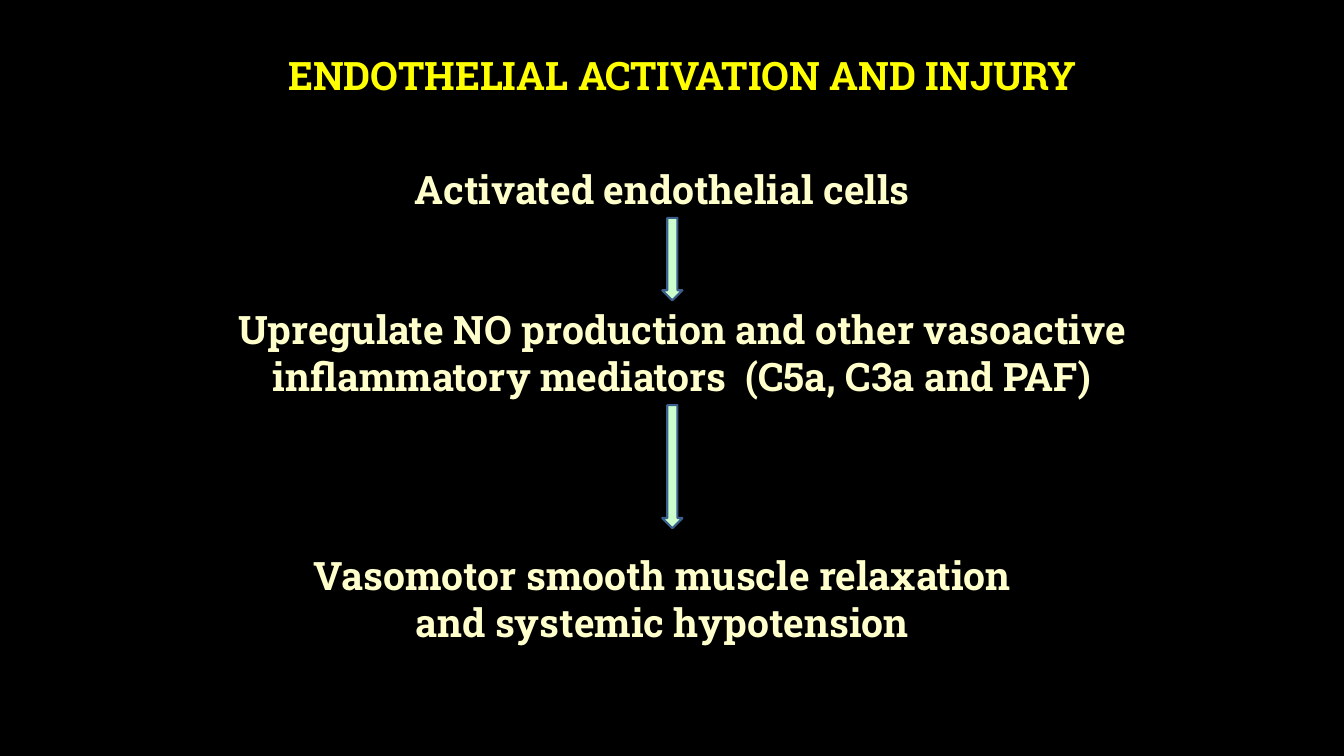
"""Build a slide on endothelial activation and injury as a flow of three steps."""
from dataclasses import dataclass

from pptx import Presentation
from pptx.dml.color import RGBColor
from pptx.enum.shapes import MSO_SHAPE
from pptx.enum.text import MSO_ANCHOR, MSO_AUTO_SIZE, PP_ALIGN
from pptx.util import Cm, Pt


@dataclass(frozen=True)
class Theme:
    """Colours, font and sizes of the slide."""
    background: RGBColor = RGBColor(0x00, 0x00, 0x00)
    heading: RGBColor = RGBColor(0xFF, 0xFF, 0x00)
    step: RGBColor = RGBColor(0xFF, 0xFF, 0xCC)
    arrow_fill: RGBColor = RGBColor(0xCC, 0xFF, 0xCC)
    arrow_line: RGBColor = RGBColor(0x3A, 0x5F, 0x8C)
    font: str = "Roboto Slab"
    text_size: Pt = Pt(28)
    line_width: Pt = Pt(1.5)


THEME = Theme()
ARROW_LEFT, ARROW_WIDTH = 16.69, 0.51

STEPS = [
    ("Activated endothelial cells", 6.78, 4.04, 19.81, 1.45),
    ("Upregulate NO production and other vasoactive inflammatory mediators  (C5a, C3a and PAF)",
     5.38, 7.57, 23.62, 2.64),
    ("Vasomotor smooth muscle relaxation and systemic hypotension", 7.49, 13.77, 18.39, 2.64),
]
ARROW_LENGTHS = [2.08, 3.1]


def write_centred(frame, wording, colour):
    """Write one bold centred run into a text frame and return its paragraph."""
    frame.word_wrap = True
    paragraph = frame.paragraphs[0]
    paragraph.alignment = PP_ALIGN.CENTER
    run = paragraph.add_run()
    run.text = wording
    run.font.name = THEME.font
    run.font.size = THEME.text_size
    run.font.bold = True
    run.font.color.rgb = colour
    return paragraph


def set_heading(slide, wording):
    """Place and fill the title placeholder."""
    heading = slide.shapes.title
    heading.left, heading.top = Cm(2.82), Cm(0.97)
    heading.width, heading.height = Cm(28.75), Cm(1.96)
    heading.text_frame.auto_size = MSO_AUTO_SIZE.NONE
    heading.text_frame.vertical_anchor = MSO_ANCHOR.MIDDLE
    write_centred(heading.text_frame, wording, THEME.heading).line_spacing = 0.9


def add_step(slide, wording, left, top, width, height):
    """Add the text of one step in the flow."""
    step = slide.shapes.add_textbox(Cm(left), Cm(top), Cm(width), Cm(height))
    write_centred(step.text_frame, wording, THEME.step)
    step.text_frame.auto_size = MSO_AUTO_SIZE.SHAPE_TO_FIT_TEXT


def add_down_arrow(slide, top, length):
    """Add a block arrow that leads down to the next step."""
    arrow = slide.shapes.add_shape(
        MSO_SHAPE.DOWN_ARROW, Cm(ARROW_LEFT), Cm(top), Cm(ARROW_WIDTH), Cm(length))
    arrow.shadow.inherit = False
    arrow.fill.solid()
    arrow.fill.fore_color.rgb = THEME.arrow_fill
    arrow.line.color.rgb = THEME.arrow_line
    arrow.line.width = THEME.line_width


def main():
    """Build and save the slide."""
    deck = Presentation()
    deck.slide_width, deck.slide_height = Cm(33.87), Cm(19.05)
    slide = deck.slides.add_slide(deck.slide_layouts.get_by_name("Title Only"))
    slide.background.fill.solid()
    slide.background.fill.fore_color.rgb = THEME.background

    set_heading(slide, "ENDOTHELIAL ACTIVATION AND INJURY")
    for step in STEPS:
        add_step(slide, *step)
    for (_, _, top, _, height), length in zip(STEPS, ARROW_LENGTHS):
        add_down_arrow(slide, top + height, length)

    deck.save("out.pptx")


if __name__ == "__main__":
    main()
